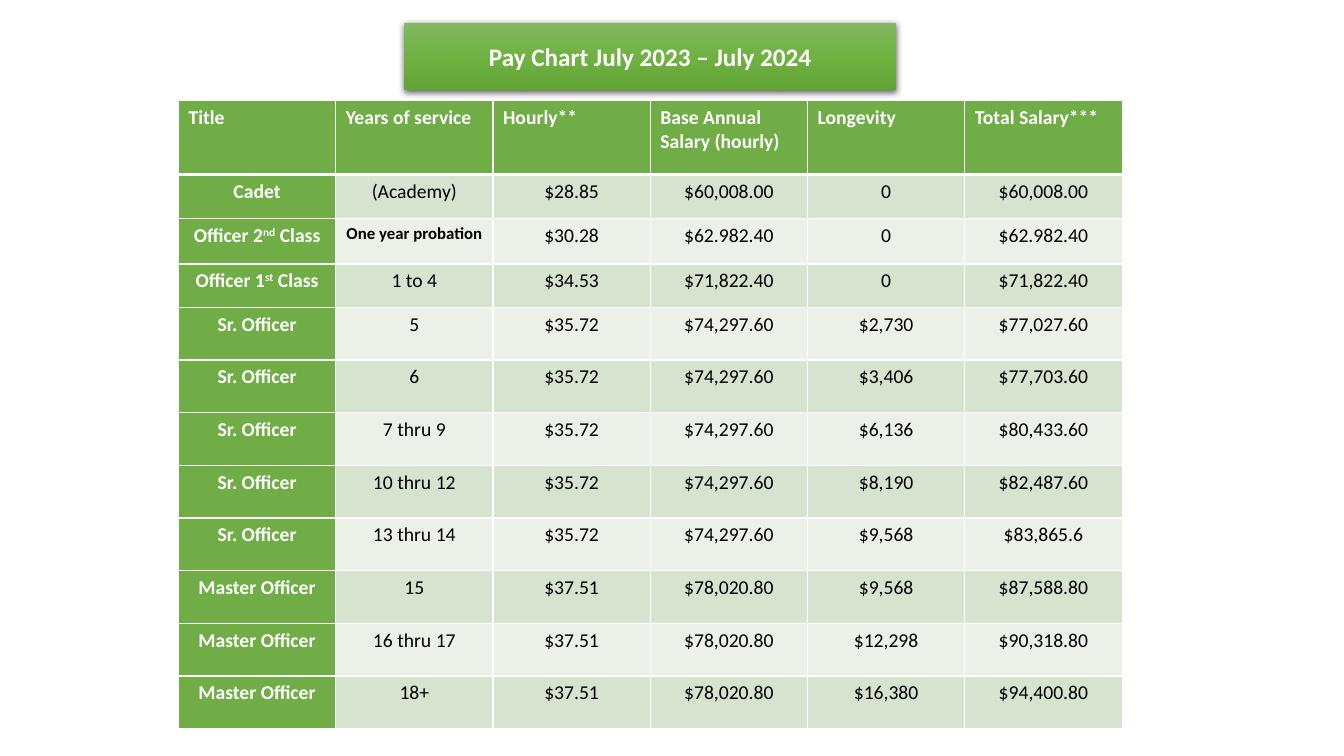
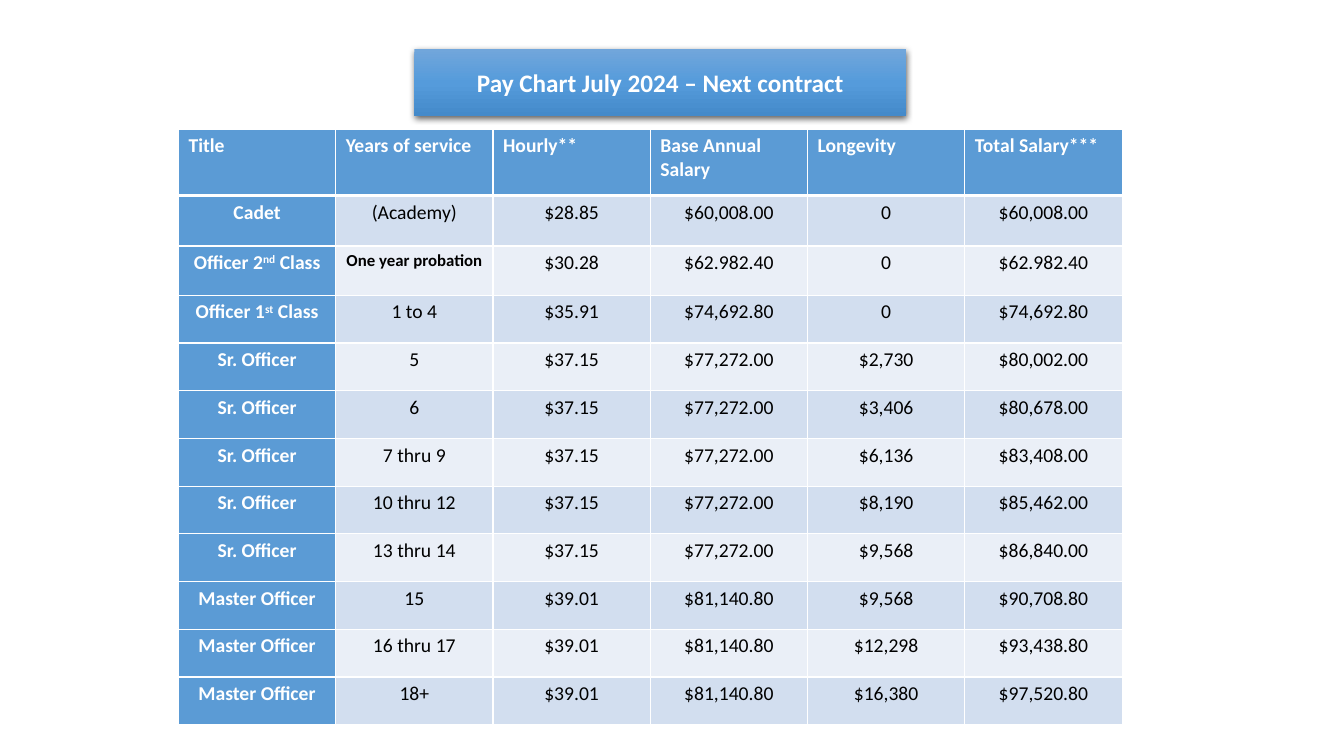
import dataclasses

import lxml.etree
import pptx
import pptx.dml.color
import pptx.enum.text
import pptx.oxml
import pptx.oxml.ns
import pptx.util


@dataclasses.dataclass(frozen=True)
class Theme:
    font: str = "Calibri"
    white: str = "FFFFFF"
    black: str = "000000"
    title: int = 18
    body: int = 14
    small: int = 12
    thin: int = 1
    thick: int = 3


theme = Theme()
Inches = pptx.util.Inches
LEFT = pptx.enum.text.PP_ALIGN.LEFT
CENTER = pptx.enum.text.PP_ALIGN.CENTER
MIDDLE = pptx.enum.text.MSO_ANCHOR.MIDDLE

RANKS = [
    ("Cadet", "(Academy)", "0"),
    ("Officer 2^nd^ Class", "One year probation", "0"),
    ("Officer 1^st^ Class", "1 to 4", "0"),
    ("Sr. Officer", "5", "$2,730"),
    ("Sr. Officer", "6", "$3,406"),
    ("Sr. Officer", "7 thru 9", "$6,136"),
    ("Sr. Officer", "10 thru 12", "$8,190"),
    ("Sr. Officer", "13 thru 14", "$9,568"),
    ("Master Officer", "15", "$9,568"),
    ("Master Officer", "16 thru 17", "$12,298"),
    ("Master Officer", "18+", "$16,380"),
]

CHARTS = [
    {
        "title": "Pay Chart July 2023 – July 2024",
        "spot": (4.01, 0.23),
        "shades": ("81B861", "6FB242", "62A336"),
        "main": "70AD47", "bands": ("D5E3CF", "EBF1E9"),
        "top": 1, "height": 6.23, "first": [0.73, 0.44, 0.45, 0.43],
        "base": "Base Annual Salary (hourly)",
        "pay": {
            "Cadet": ("$28.85", "$60,008.00"),
            "Officer 2^nd^ Class": ("$30.28", "$62.982.40"),
            "Officer 1^st^ Class": ("$34.53", "$71,822.40"),
            "Sr. Officer": ("$35.72", "$74,297.60"),
            "Master Officer": ("$37.51", "$78,020.80"),
        },
        "totals": ["$60,008.00", "$62.982.40", "$71,822.40", "$77,027.60",
                   "$77,703.60", "$80,433.60", "$82,487.60", "$83,865.6",
                   "$87,588.80", "$90,318.80", "$94,400.80"],
    },
    {
        "title": "Pay Chart July 2024 – Next contract",
        "spot": (4.11, 0.49),
        "shades": ("71A6DB", "559BDB", "448ACA"),
        "main": "5B9BD5", "bands": ("D2DEEF", "EAEFF7"),
        "top": 1.28, "height": 5.91, "first": [0.66, 0.5, 0.49],
        "base": "Base Annual Salary",
        "pay": {
            "Cadet": ("$28.85", "$60,008.00"),
            "Officer 2^nd^ Class": ("$30.28", "$62.982.40"),
            "Officer 1^st^ Class": ("$35.91", "$74,692.80"),
            "Sr. Officer": ("$37.15", "$77,272.00"),
            "Master Officer": ("$39.01", "$81,140.80"),
        },
        "totals": ["$60,008.00", "$62.982.40", "$74,692.80", "$80,002.00",
                   "$80,678.00", "$83,408.00", "$85,462.00", "$86,840.00",
                   "$90,708.80", "$93,438.80", "$97,520.80"],
    },
]


def put(frame, text, size=theme.body, color=theme.black, bold=False, align=CENTER):
    """Write one paragraph; text between ^ marks is raised."""
    para = frame.paragraphs[0]
    para.alignment = align
    for i, part in enumerate(text.split("^")):
        run = para.add_run()
        run.text = part
        run.font.name = theme.font
        run.font.size = pptx.util.Pt(size)
        run.font.bold = bold
        run.font.color.rgb = pptx.dml.color.RGBColor.from_string(color)
        if i % 2:
            run.font._element.set("baseline", "30000")


def add_xml(parent, xml):
    """Append a piece of DrawingML to an element."""
    space = pptx.oxml.ns.nsdecls("a")
    for node in pptx.oxml.parse_xml(f"<a:wrap {space}>{xml}</a:wrap>"):
        parent.append(node)
    lxml.etree.cleanup_namespaces(parent)


deck = pptx.Presentation()
deck.slide_width = Inches(13.33)
deck.slide_height = Inches(7.5)

for chart in CHARTS:
    slide = deck.slides.add_slide(deck.slide_layouts[5])

    # Title band with a gradient and a soft shadow
    band = slide.shapes.title
    band.left, band.top = map(Inches, chart["spot"])
    band.width, band.height = Inches(4.88), Inches(0.66)
    stops = "".join(
        f'<a:gs pos="{i * 50000}"><a:srgbClr val="{shade}"/></a:gs>'
        for i, shade in enumerate(chart["shades"]))
    add_xml(band._element.spPr, f"""
        <a:prstGeom prst="rect"><a:avLst/></a:prstGeom>
        <a:gradFill rotWithShape="1"><a:gsLst>{stops}</a:gsLst>
            <a:lin ang="5400000" scaled="0"/></a:gradFill>
        <a:ln><a:noFill/></a:ln>
        <a:effectLst><a:outerShdw blurRad="57150" dist="19050" dir="5400000"
            algn="ctr" rotWithShape="0"><a:srgbClr val="{theme.black}">
            <a:alpha val="63000"/></a:srgbClr></a:outerShdw></a:effectLst>""")
    band.text_frame.word_wrap = True
    band.text_frame.auto_size = pptx.enum.text.MSO_AUTO_SIZE.NONE
    band.text_frame.vertical_anchor = MIDDLE
    put(band.text_frame, chart["title"], size=theme.title, color=theme.white, bold=True)

    # Header, then one row for each rank
    rows = [("Title", "Years of service", "Hourly**", chart["base"],
             "Longevity", "Total Salary***")]
    for (rank, years, extra), total in zip(RANKS, chart["totals"]):
        rows.append((rank, years, *chart["pay"][rank], extra, total))

    table = slide.shapes.add_table(
        len(rows), len(rows[0]), Inches(1.77), Inches(chart["top"]),
        Inches(9.36), Inches(chart["height"])).table
    first = chart["first"]
    count = len(rows) - len(first)
    rest = (chart["height"] - sum(first)) / count
    for line, height in zip(table.rows, first + [rest] * count):
        line.height = Inches(height)

    for r, row in enumerate(rows):
        for c, text in enumerate(row):
            cell = table.cell(r, c)
            edges = {"L": theme.thin, "R": theme.thin,
                     "T": theme.thick if r == 1 else theme.thin,
                     "B": theme.thick if r == 0 else theme.thin}
            for side, width in edges.items():
                add_xml(cell._tc.get_or_add_tcPr(), f"""
                    <a:ln{side} w="{pptx.util.Pt(width)}"><a:solidFill>
                    <a:srgbClr val="{theme.white}"/></a:solidFill></a:ln{side}>""")
            head = r == 0 or c == 0
            note = text == "One year probation"
            fill = chart["main"] if head else chart["bands"][(r - 1) % 2]
            cell.fill.solid()
            cell.fill.fore_color.rgb = pptx.dml.color.RGBColor.from_string(fill)
            put(cell.text_frame, text,
                size=theme.small if note else theme.body,
                color=theme.white if head else theme.black,
                bold=head or note,
                align=LEFT if r == 0 else CENTER)

deck.save("out.pptx")
